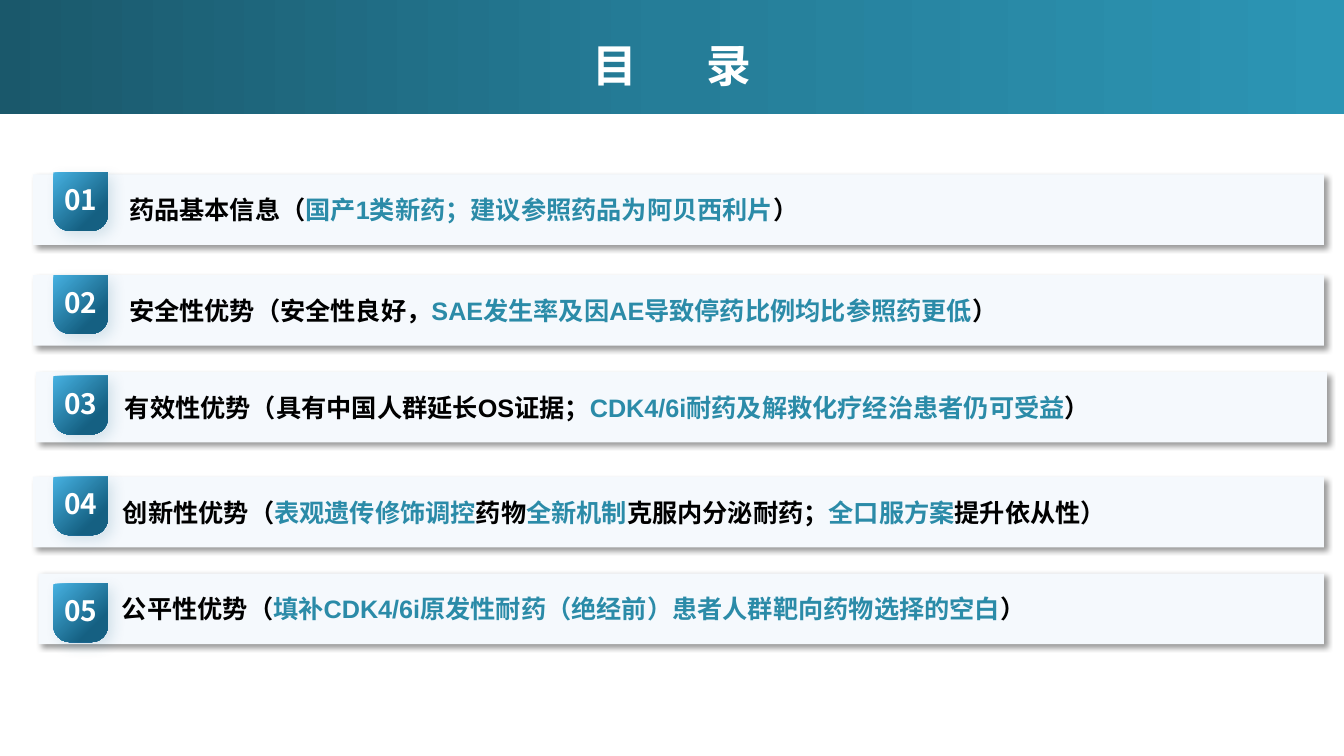
from dataclasses import dataclass

from pptx import Presentation
from pptx.dml.color import RGBColor
from pptx.enum.shapes import MSO_SHAPE
from pptx.enum.text import MSO_ANCHOR, PP_ALIGN
from pptx.oxml import parse_xml
from pptx.oxml.ns import nsdecls, qn
from pptx.shapes.autoshape import Shape
from pptx.slide import Slide
from pptx.text.text import _Paragraph
from pptx.util import Emu, Pt

EMU_PER_PX = 9144
COLORS = {
    "white": "FFFFFF",
    "black": "000000",
    "accent": "2B8BA8",
    "bar": "F5F9FD",
    "banner_dark": "1A586B",
    "banner_mid": "257D98",
    "banner_light": "2C95B4",
    "badge_light": "46B1E1",
    "badge_dark": "156082",
}


@dataclass(frozen=True)
class Shadow:
    color: str
    opacity: int
    blur: int
    distance: int


@dataclass(frozen=True)
class Entry:
    left: int
    top: int
    width: int
    text_left: int
    badge_top: int
    phrases: tuple[tuple[str, str], ...]


BAR_SHADOW = Shadow("black", 40, 4, 3)
BADGE_SHADOW = Shadow("badge_dark", 15, 10, 5)
ENTRIES = (
    Entry(33, 173, 1280, 128, 171, (
        ("药品基本信息（", "black"),
        ("国产1类新药；建议参照药品为阿贝西利片", "accent"),
        ("）", "black"))),
    Entry(33, 273, 1280, 128, 273, (
        ("安全性优势（安全性良好，", "black"),
        ("SAE发生率及因AE导致停药比例均比参照药更低", "accent"),
        ("）", "black"))),
    Entry(36, 369, 1280, 124, 373, (
        ("有效性优势（具有中国人群延长OS证据；", "black"),
        ("CDK4/6i耐药及解救化疗经治患者仍可受益", "accent"),
        ("）", "black"))),
    Entry(33, 473, 1280, 122, 473, (
        ("创新性优势（", "black"),
        ("表观遗传修饰调控", "accent"),
        ("药物", "black"),
        ("全新机制", "accent"),
        ("克服内分泌耐药；", "black"),
        ("全口服方案", "accent"),
        ("提升依从性）", "black"))),
    Entry(38, 569, 1275, 121, 579, (
        ("公平性优势（", "black"),
        ("填补CDK4/6i原发性耐药（绝经前）患者人群靶向药物选择的空白", "accent"),
        ("）", "black"))),
)


def px(length: int) -> Emu:
    return Emu(length * EMU_PER_PX)


def rgb(color: str) -> RGBColor:
    return RGBColor.from_string(COLORS[color])


def add_panel(slide: Slide, kind: MSO_SHAPE, left: int, top: int,
              width: int, height: int) -> Shape:
    panel = slide.shapes.add_shape(kind, px(left), px(top), px(width), px(height))
    panel.line.fill.background()
    panel.shadow.inherit = False
    return panel


def fill_gradient(panel: Shape, stops: tuple[tuple[int, str], ...], angle: int) -> None:
    stop_xml = "".join(
        f'<a:gs pos="{position * 1000}"><a:srgbClr val="{COLORS[color]}"/></a:gs>'
        for position, color in stops)
    gradient = parse_xml(
        f'<a:gradFill {nsdecls("a")} rotWithShape="1"><a:gsLst>{stop_xml}</a:gsLst>'
        f'<a:lin ang="{angle * 60000}" scaled="0"/></a:gradFill>')
    panel.element.spPr.find(qn("a:prstGeom")).addnext(gradient)


def cast_shadow(panel: Shape, shadow: Shadow) -> None:
    panel.element.spPr.find(qn("a:effectLst")).append(parse_xml(
        f'<a:outerShdw {nsdecls("a")} blurRad="{Pt(shadow.blur)}" '
        f'dist="{Pt(shadow.distance)}" dir="2700000" algn="tl" rotWithShape="0">'
        f'<a:srgbClr val="{COLORS[shadow.color]}">'
        f'<a:alpha val="{shadow.opacity * 1000}"/></a:srgbClr></a:outerShdw>'))


def set_font(paragraph: _Paragraph, name: str, size: int) -> None:
    paragraph.font.name = name
    paragraph.font.size = Pt(size)
    paragraph.font.bold = True


def add_run(paragraph: _Paragraph, text: str, color: str, spacing: int = 0) -> None:
    run = paragraph.add_run()
    run.text = text
    run.font.color.rgb = rgb(color)
    if spacing:
        run._r.get_or_add_rPr().set("spc", str(spacing * 100))


def add_header(slide: Slide) -> None:
    banner = add_panel(slide, MSO_SHAPE.RECTANGLE, 0, 0, 1333, 113)
    fill_gradient(
        banner, ((0, "banner_dark"), (50, "banner_mid"), (100, "banner_light")), 0)
    title = slide.shapes.title
    banner.element.addnext(title.element)
    title.left, title.top, title.width, title.height = px(0), px(23), px(1333), px(88)
    title.text_frame.vertical_anchor = MSO_ANCHOR.MIDDLE
    heading = title.text_frame.paragraphs[0]
    heading.alignment = PP_ALIGN.CENTER
    heading.line_spacing = 0.9
    set_font(heading, "Arial", 32)
    add_run(heading, "目 ", "white", 21)
    add_run(heading, "录", "white")


def add_bar(slide: Slide, entry: Entry) -> None:
    bar = add_panel(slide, MSO_SHAPE.RECTANGLE, entry.left, entry.top, entry.width, 70)
    bar.fill.solid()
    bar.fill.fore_color.rgb = rgb("bar")
    cast_shadow(bar, BAR_SHADOW)
    bar.text_frame.margin_left = px(entry.text_left - entry.left)
    bar.text_frame.vertical_anchor = MSO_ANCHOR.MIDDLE
    summary = bar.text_frame.paragraphs[0]
    summary.alignment = PP_ALIGN.LEFT
    set_font(summary, "Arial", 18)
    for text, color in entry.phrases:
        add_run(summary, text, color)


def add_badge(slide: Slide, number: int, top: int) -> None:
    badge = add_panel(slide, MSO_SHAPE.ROUND_2_SAME_RECTANGLE, 53, top, 54, 58)
    badge.adjustments[0] = 0
    badge.adjustments[1] = 0.3
    fill_gradient(badge, ((0, "badge_light"), (75, "badge_dark")), 45)
    cast_shadow(badge, BADGE_SHADOW)
    badge.text_frame.word_wrap = False
    badge.text_frame.vertical_anchor = MSO_ANCHOR.MIDDLE
    label = badge.text_frame.paragraphs[0]
    label.alignment = PP_ALIGN.CENTER
    set_font(label, "Noto Sans CJK SC", 20)
    add_run(label, f"{number:02d}", "white")


def main() -> None:
    deck = Presentation()
    deck.slide_width, deck.slide_height = px(1333), px(750)
    contents = deck.slides.add_slide(deck.slide_layouts[5])
    add_header(contents)
    for number, entry in enumerate(ENTRIES, start=1):
        add_bar(contents, entry)
        add_badge(contents, number, entry.badge_top)
    deck.save("out.pptx")


if __name__ == "__main__":
    main()
